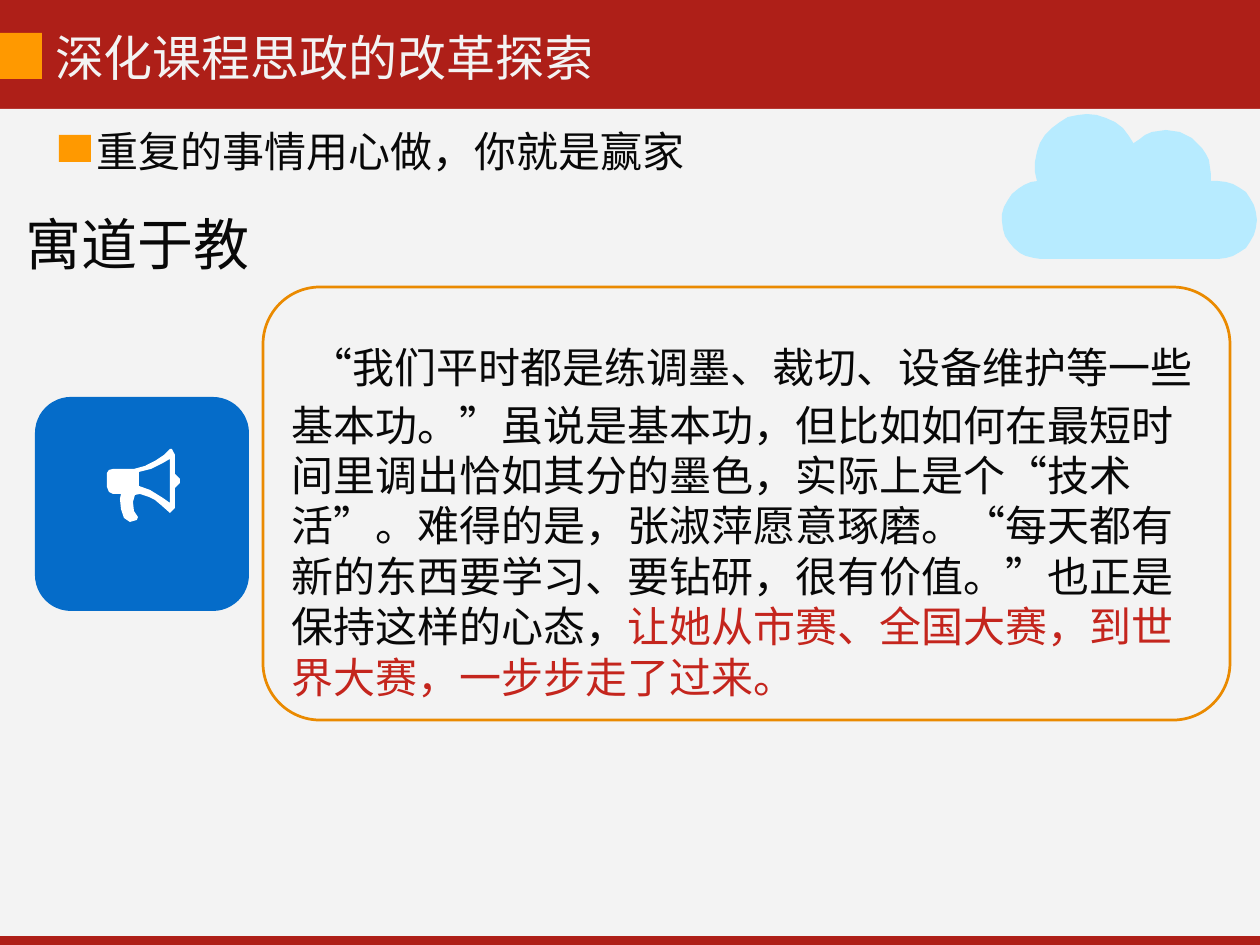
from math import cos, radians, sin
from lxml import etree
from pptx import Presentation
from pptx.dml.color import RGBColor
from pptx.enum.shapes import MSO_SHAPE
from pptx.enum.text import MSO_ANCHOR, PP_ALIGN
from pptx.oxml.ns import qn
from pptx.util import Pt

PX = 914400 / 126
FONT = "Noto Sans CJK SC"
RECT, ROUND = MSO_SHAPE.RECTANGLE, MSO_SHAPE.ROUNDED_RECTANGLE
TOP, LEFT = MSO_ANCHOR.TOP, PP_ALIGN.LEFT
COLORS = {
    "red": "AE1F18", "paper": "F3F3F3", "orange": "FF9900", "blue": "056CC9",
    "white": "FFFFFF", "border": "EA8A00", "ink": "080808",
    "accent": "C4251D", "sky": "B7EBFF",
}

BANDS = [
    ((0, 0, 1260, 109), "red"),
    ((0, 936, 1260, 9), "red"),
    ((0, 109, 1260, 827), "paper"),
    ((0, 33, 42, 46), "orange"),
]
TITLE = [dict(size=28, line=33.6, runs=[("深化课程思政的改革探索", "paper")])]
BODY = [
    dict(size=24, line=28.8, margin=72, runs=[("重复的事情用心做，你就是赢家", "ink")]),
    dict(size=32, line=38.4, before=19, margin=1, runs=[("寓道于教", "ink")]),
    dict(size=24, line=33.2, before=32.3, margin=267, indent=19, runs=[
        ("“我们平时都是练调墨、裁切、设备维护等一些 基本功。”虽说是基本功，但比如如何在最短时", "ink")]),
    dict(size=24, line=28.8, margin=267, runs=[
        ("间里调出恰如其分的墨色，实际上是个“技术 活”。难得的是，张淑萍愿意琢磨。"
         "“每天都有 新的东西要学习、要钻研，很有价值。”也正是 保持这样的心态，", "ink"),
        ("让她从市赛、全国大赛，到世 界大赛，一步步走了过来。", "accent")]),
]
MEGAPHONE = [
    [(170, 449), (164, 455), (155, 461), (145, 466), (134, 469), (113, 469),
     (109, 470), (107, 473), (107, 487), (109, 492), (113, 494), (121, 494),
     (120, 499), (121, 509), (124, 518), (130, 522), (137, 520), (138, 517),
     (134, 511), (133, 502), (135, 495), (140, 494), (149, 497), (155, 500),
     (161, 505), (170, 513), (175, 508), (175, 488), (180, 483), (180, 479),
     (175, 474), (175, 455), (172, 449)],
    [(139, 472), (151, 469), (163, 463), (170, 459), (170, 503), (163, 498),
     (150, 490), (139, 486)],
]
CLOUD_ARCS = [
    (1041, 220, 39, 90, 266),
    (1087, 166, 52, 163, 335),
    (1166, 175, 45, 225, 368),
    (1218, 220, 39, 270, 450),
]


def emu(px):
    return round(px * PX)


def rgb(name):
    return RGBColor.from_string(COLORS[name])


def paint(sp, fill=None, line=None):
    sp.shadow.inherit = False
    if fill:
        sp.fill.solid()
        sp.fill.fore_color.rgb = rgb(fill)
    else:
        sp.fill.background()
    if line:
        sp.line.color.rgb = rgb(line)
        sp.line.width = Pt(1.56)
    else:
        sp.line.fill.background()


def add_box(s, kind, box, fill=None, line=None, radius=None):
    sp = s.shapes.add_shape(kind, *map(emu, box))
    if radius:
        sp.adjustments[0] = radius / min(box[2:])
    paint(sp, fill, line)


def add_outline(s, contours, fill):
    builder = s.shapes.build_freeform(*contours[0][0], scale=PX)
    for i, points in enumerate(contours):
        if i:
            builder.move_to(*points[0])
        builder.add_line_segments(points[1:], close=True)
    paint(builder.convert_to_shape(), fill)


def arc(cx, cy, radius, start, end, steps=16):
    angles = [radians(start + (end - start) * i / steps) for i in range(steps + 1)]
    return [(cx + radius * cos(a), cy + radius * sin(a)) for a in angles]


def write(sp, paragraphs, top, wrap):
    tf = sp.text_frame
    tf.word_wrap = wrap
    tf.vertical_anchor = TOP
    tf.margin_left = tf.margin_right = tf.margin_bottom = 0
    tf.margin_top = emu(top)
    for i, item in enumerate(paragraphs):
        p = tf.add_paragraph() if i else tf.paragraphs[0]
        p.alignment = LEFT
        p.line_spacing = Pt(item["line"])
        p.space_before = Pt(item.get("before", 0))
        pPr = p._p.get_or_add_pPr()
        pPr.set("marL", str(emu(item.get("margin", 0))))
        pPr.set("indent", str(emu(item.get("indent", 0))))
        for text, color in item["runs"]:
            r = p.add_run()
            r.text = text
            r.font.size = Pt(item["size"])
            r.font.name = FONT
            r.font.color.rgb = rgb(color)
            etree.SubElement(r._r.get_or_add_rPr(), qn("a:ea"), typeface=FONT)


prs = Presentation()
prs.slide_width, prs.slide_height = emu(1260), emu(945)
s = prs.slides.add_slide(prs.slide_layouts[5])

for box, fill in BANDS:
    add_box(s, RECT, box, fill)

title = s.shapes.title
title.left, title.top, title.width, title.height = map(emu, (55, 23, 542, 62))
write(title, TITLE, 5, False)
s.shapes._spTree.append(title._element)

add_box(s, RECT, (59, 135, 32, 27), "orange")
add_box(s, ROUND, (35, 397, 214, 214), "blue", radius=36)
add_outline(s, MEGAPHONE, "white")
add_box(s, ROUND, (263, 287, 967, 433), line="border", radius=57)

body = s.shapes.add_textbox(*map(emu, (25, 97, 1171, 602)))
write(body, BODY, 29, True)

add_outline(s, [[pt for a in CLOUD_ARCS for pt in arc(*a)]], "sky")

prs.save("out.pptx")
